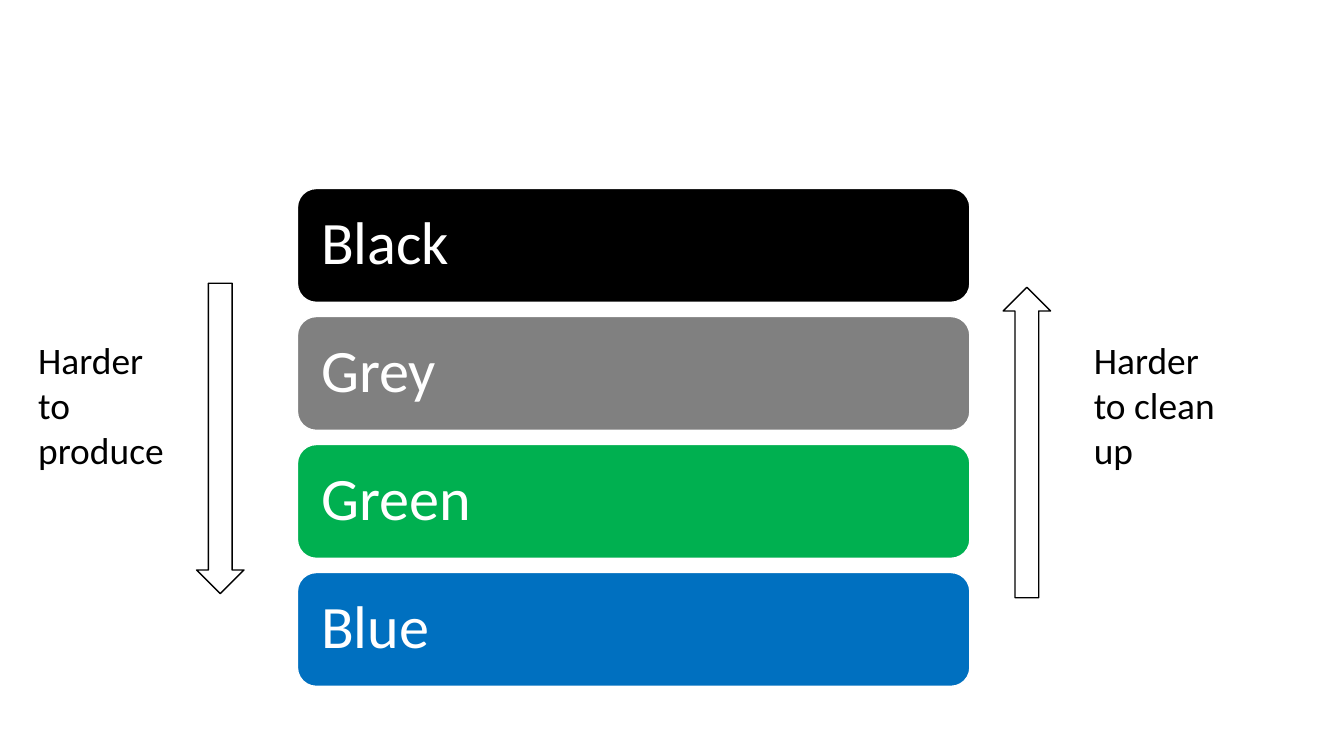
from dataclasses import dataclass

from pptx import Presentation
from pptx.dml.color import RGBColor
from pptx.enum.shapes import MSO_SHAPE
from pptx.enum.text import MSO_ANCHOR, PP_ALIGN
from pptx.util import Inches, Pt


@dataclass(frozen=True)
class Theme:
    font: str = "Calibri"
    bar_size: float = 43
    label_size: float = 26.7
    line_width: float = 1
    white: str = "FFFFFF"
    black: str = "000000"
    grey: str = "808080"
    green: str = "00B050"
    blue: str = "0070C0"


theme = Theme()


def add_outlined_shape(kind, left, top, width, height, fill, line):
    shape = slide.shapes.add_shape(
        kind, Inches(left), Inches(top), Inches(width), Inches(height))
    shape.shadow.inherit = False
    shape.fill.solid()
    shape.fill.fore_color.rgb = RGBColor.from_string(fill)
    shape.line.color.rgb = RGBColor.from_string(line)
    shape.line.width = Pt(theme.line_width)
    return shape


def add_run(paragraph, text, size, color):
    run = paragraph.add_run()
    run.text = text
    run.font.name = theme.font
    run.font.size = Pt(size)
    run.font.color.rgb = RGBColor.from_string(color)


presentation = Presentation()
presentation.slide_width = Inches(13.33)
presentation.slide_height = Inches(7.5)
slide = presentation.slides.add_slide(presentation.slide_layouts[6])

# Colour bars, stacked at an equal pitch
bars = [("Black", theme.black), ("Grey", theme.grey),
        ("Green", theme.green), ("Blue", theme.blue)]
bar_top, bar_pitch = 1.87, 1.27
for index, (name, color) in enumerate(bars):
    bar = add_outlined_shape(MSO_SHAPE.ROUNDED_RECTANGLE, 2.95,
                             bar_top + index * bar_pitch, 6.67, 1.13,
                             color, theme.white)
    frame = bar.text_frame
    frame.word_wrap = True
    frame.vertical_anchor = MSO_ANCHOR.MIDDLE
    frame.margin_left = frame.margin_right = Inches(0.18)
    paragraph = frame.paragraphs[0]
    paragraph.alignment = PP_ALIGN.LEFT
    paragraph.line_spacing = 0.9
    add_run(paragraph, name, theme.bar_size, theme.white)

# Arrows and their labels on either side
sides = [(MSO_SHAPE.DOWN_ARROW, 1.95, 2.81, 0.28, "Harder to produce"),
         (MSO_SHAPE.UP_ARROW, 9.95, 2.85, 10.75, "Harder to clean up")]
for arrow_kind, arrow_left, arrow_top, label_left, text in sides:
    add_outlined_shape(arrow_kind, arrow_left, arrow_top, 0.47, 3.08,
                       theme.white, theme.black)
    label = slide.shapes.add_textbox(
        Inches(label_left), Inches(3.3), Inches(1.58), Inches(1.45))
    label.text_frame.word_wrap = True
    add_run(label.text_frame.paragraphs[0], text, theme.label_size, theme.black)

presentation.save("out.pptx")
